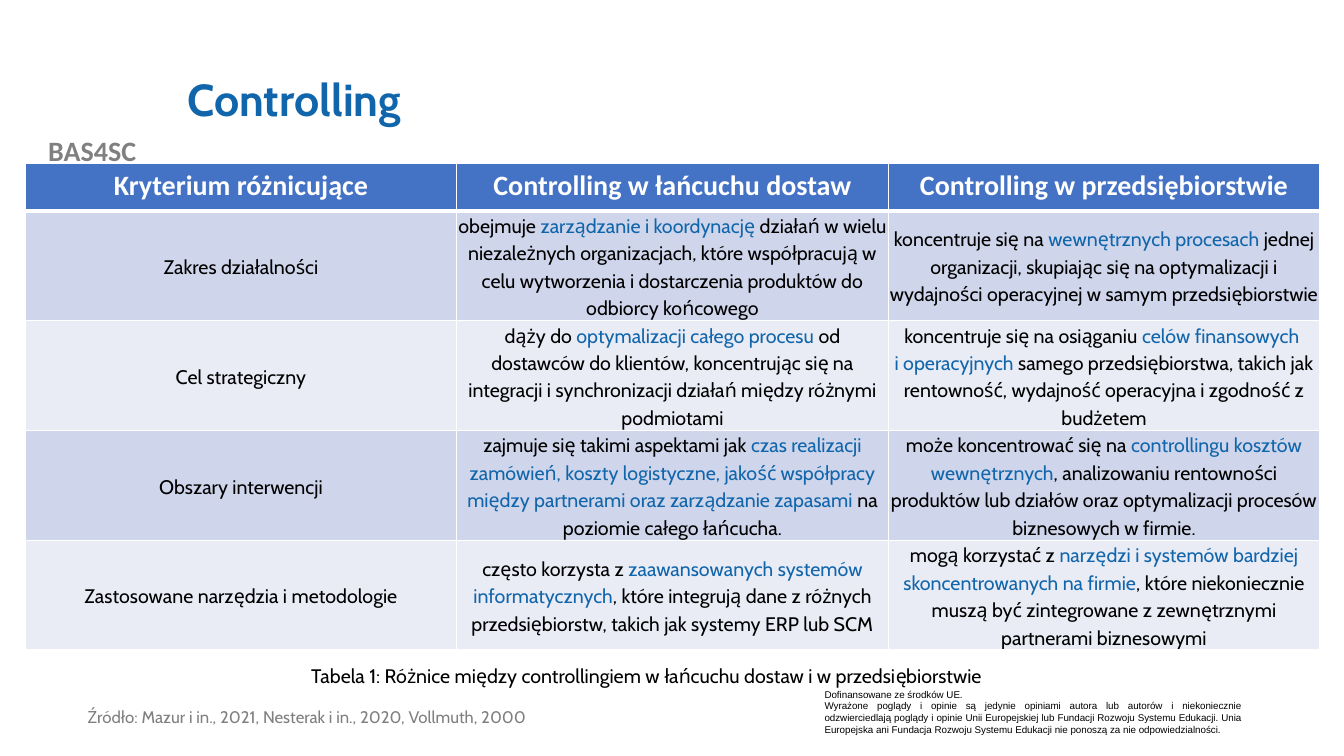
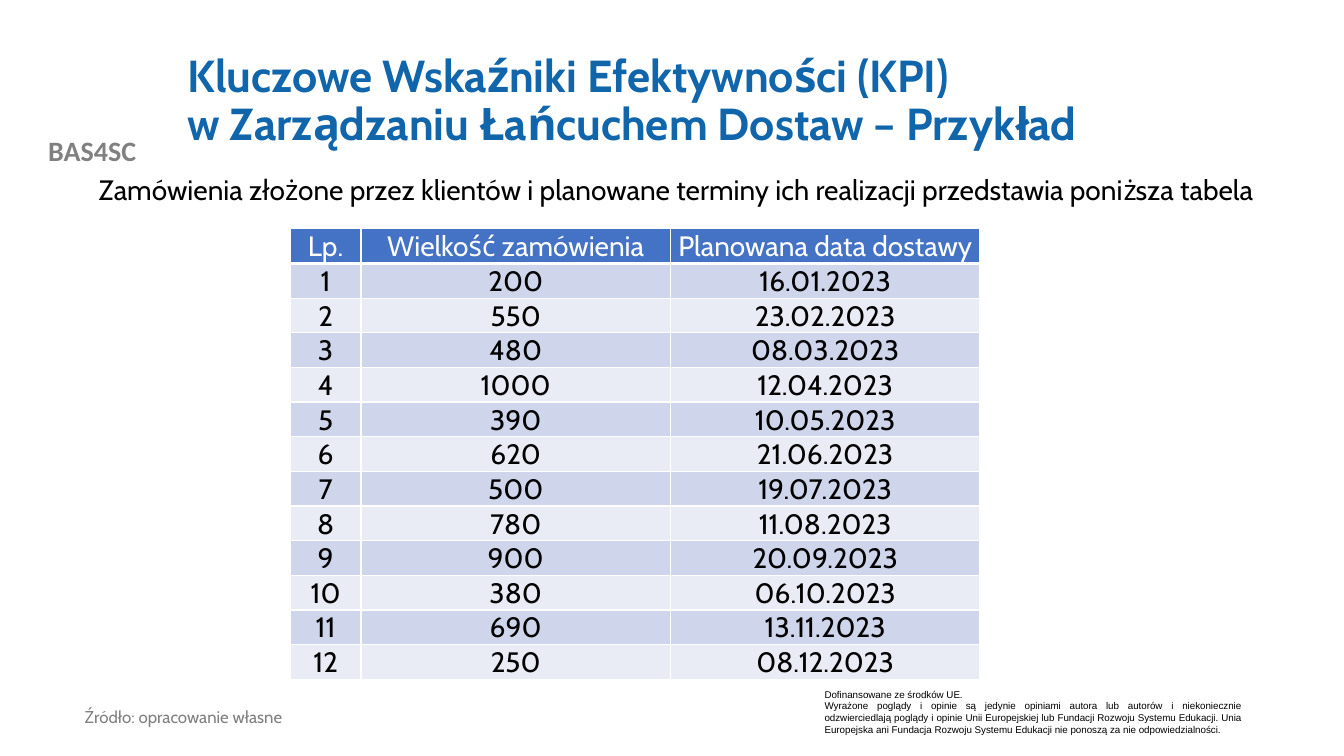
from lxml.etree import SubElement
from pptx import Presentation
from pptx.dml.color import RGBColor
from pptx.enum.text import MSO_ANCHOR as Anchor, PP_ALIGN as Align
from pptx.oxml.ns import qn
from pptx.util import Pt

PX = 9144
COLORS = {
    "title": "1065AB", "ink": "000000", "white": "FFFFFF", "brand": "808080",
    "source": "7F7F7F", "header": "4472C4", "odd": "CFD5EA", "even": "E9EBF5",
}
TITLE = dict(size=32, color="title", bold=True, spacing=0.9, anchor=Anchor.MIDDLE)
SOURCE = dict(size=12, color="source")


def write(frame, *paragraphs, size, font="Cabin", color="ink", bold=False,
          align=Align.LEFT, spacing=None, after=None, anchor=Anchor.TOP):
    frame.word_wrap = True
    frame.vertical_anchor = anchor
    for number, text in enumerate(paragraphs):
        para = frame.add_paragraph() if number else frame.paragraphs[0]
        para.alignment = align
        para.line_spacing = spacing
        para.space_after = None if after is None else Pt(after)
        for part, piece in enumerate(text.split("*")):
            for line, words in enumerate(piece.split("\n")):
                if line:
                    para.add_line_break()
                if not words:
                    continue
                span = para.add_run()
                span.text = words
                span.font.name = font
                span.font.size = Pt(size)
                span.font.bold = bold
                span.font.color.rgb = RGBColor.from_string(COLORS["title" if part % 2 else color])


def add_grid(page, left, top, widths, heights, rows, header, body, header_margin, body_margin):
    frame = page.shapes.add_table(len(rows), len(widths), left * PX, top * PX,
                                  sum(widths) * PX, sum(heights) * PX)
    table = frame.table
    table.horz_banding = False
    for column, width in zip(table.columns, widths):
        column.width = width * PX
    for number, (row, height, texts) in enumerate(zip(table.rows, heights, rows)):
        row.height = height * PX
        for cell, text in zip(row.cells, texts):
            margins = body_margin if number else header_margin
            if margins is not None:
                cell.margin_left = cell.margin_right = cell.margin_top = margins * PX
                cell.margin_bottom = 0
            style = body if number else header
            write(cell.text_frame, text, **{**style, "anchor": Anchor.TOP})
            cell.vertical_anchor = style.get("anchor", Anchor.TOP)
            properties = cell._tc.get_or_add_tcPr()
            thick = {0: "lnB", 1: "lnT"}.get(number)
            for side in ("lnL", "lnR", "lnT", "lnB"):
                border = SubElement(properties, qn("a:" + side), w=str(Pt(3 if side == thick else 1)))
                SubElement(SubElement(border, qn("a:solidFill")), qn("a:srgbClr"), val=COLORS["white"])
            shade = "header" if number == 0 else "odd" if number % 2 else "even"
            cell.fill.solid()
            cell.fill.fore_color.rgb = RGBColor.from_string(COLORS[shade])


deck = Presentation()
deck.slide_width, deck.slide_height = 1333 * PX, 750 * PX
comparison, example = [deck.slides.add_slide(deck.slide_layouts[6]) for _ in range(2)]

shared = [
    ((0, 128, 183, 44), ["BAS4SC"],
     dict(size=20, font="Calibri", color="brand", bold=True, align=Align.CENTER)),
    ((808, 678, 433, 57), [
        "Dofinansowane ze środków UE.",
        "Wyrażone poglądy i opinie są jedynie opiniami autora lub autorów i niekoniecznie "
        "odzwierciedlają poglądy i opinie Unii Europejskiej lub Fundacji Rozwoju Systemu Edukacji. "
        "Unia Europejska ani Fundacja Rozwoju Systemu Edukacji nie ponoszą za nie odpowiedzialności.",
    ], dict(size=7, font="Arial", align=Align.JUSTIFY)),
]
comparison_texts = [
    ((77, 700, 578, 26), ["Źródło: Mazur i in., 2021, Nesterak i in., 2020, Vollmuth, 2000"],
     dict(SOURCE, spacing=0.8)),
    ((96, 654, 1091, 34),
     ["Tabela 1: Różnice między controllingiem w łańcuchu dostaw i w przedsiębiorstwie"],
     dict(size=14, align=Align.CENTER)),
]
example_texts = [
    ((88, 170, 1242, 114),
     ["Zamówienia złożone przez klientów i planowane terminy ich realizacji przedstawia poniższa tabela"],
     dict(size=20, spacing=0.9, align=Align.JUSTIFY)),
    ((74, 698, 501, 52), ["Źródło: opracowanie własne"], dict(SOURCE, spacing=0.9)),
]
slides = [
    (comparison, "Controlling", comparison_texts),
    (example, "Kluczowe Wskaźniki Efektywności (KPI)\nw Zarządzaniu Łańcuchem Dostaw – Przykład",
     example_texts),
]
for page, title, texts in slides:
    for place, paragraphs, style in shared + [((176, 40, 1066, 122), [title], TITLE)] + texts:
        box = page.shapes.add_textbox(*[length * PX for length in place])
        write(box.text_frame, *paragraphs, **style)

criteria = [
    ("Kryterium różnicujące", "Controlling w łańcuchu dostaw", "Controlling w przedsiębiorstwie"),
    ("Zakres działalności",
     "obejmuje *zarządzanie i koordynację *działań w wielu niezależnych organizacjach, które "
     "współpracują w celu wytworzenia i dostarczenia produktów do odbiorcy końcowego",
     "koncentruje się na *wewnętrznych procesach *jednej organizacji, skupiając się na "
     "optymalizacji i wydajności operacyjnej w samym przedsiębiorstwie"),
    ("Cel strategiczny",
     "dąży do *optymalizacji całego procesu *od dostawców do klientów, koncentrując się na "
     "integracji i synchronizacji działań między różnymi podmiotami",
     "koncentruje się na osiąganiu *celów finansowych \ni operacyjnych *samego przedsiębiorstwa, "
     "takich jak rentowność, wydajność operacyjna i zgodność z budżetem"),
    ("Obszary interwencji",
     "zajmuje się takimi aspektami jak* czas realizacji zamówień, koszty logistyczne, jakość "
     "współpracy między partnerami oraz zarządzanie zapasami *na poziomie całego łańcucha.",
     "może koncentrować się na *controllingu kosztów wewnętrznych*, analizowaniu rentowności "
     "produktów lub działów oraz optymalizacji procesów biznesowych w firmie."),
    ("Zastosowane narzędzia i metodologie",
     "często korzysta z *zaawansowanych systemów informatycznych*, które integrują dane z różnych "
     "przedsiębiorstw, takich jak systemy ERP lub SCM",
     "mogą korzystać z *narzędzi i systemów bardziej skoncentrowanych na firmie*, które "
     "niekoniecznie muszą być zintegrowane z zewnętrznymi partnerami biznesowymi"),
]
add_grid(comparison, 25, 162, [428] * 3, [47] + [109] * 4, criteria,
         header=dict(size=20, font="Calibri", color="white", bold=True, align=Align.CENTER),
         body=dict(size=14, align=Align.CENTER, spacing=1.15, after=6, anchor=Anchor.MIDDLE),
         header_margin=None, body_margin=0)

orders = [
    (200, "16.01.2023"), (550, "23.02.2023"), (480, "08.03.2023"), (1000, "12.04.2023"),
    (390, "10.05.2023"), (620, "21.06.2023"), (500, "19.07.2023"), (780, "11.08.2023"),
    (900, "20.09.2023"), (380, "06.10.2023"), (690, "13.11.2023"), (250, "08.12.2023"),
]
order_rows = [("Lp.", "Wielkość zamówienia", "Planowana data dostawy")]
order_rows += [(str(number), str(amount), date) for number, (amount, date) in enumerate(orders, 1)]
order_style = dict(size=20, align=Align.CENTER, anchor=Anchor.MIDDLE)
add_grid(example, 288, 227, [70, 307, 307], [34] * 13, order_rows,
         header=dict(order_style, color="white"), body=order_style,
         header_margin=1, body_margin=1)

deck.save("out.pptx")
